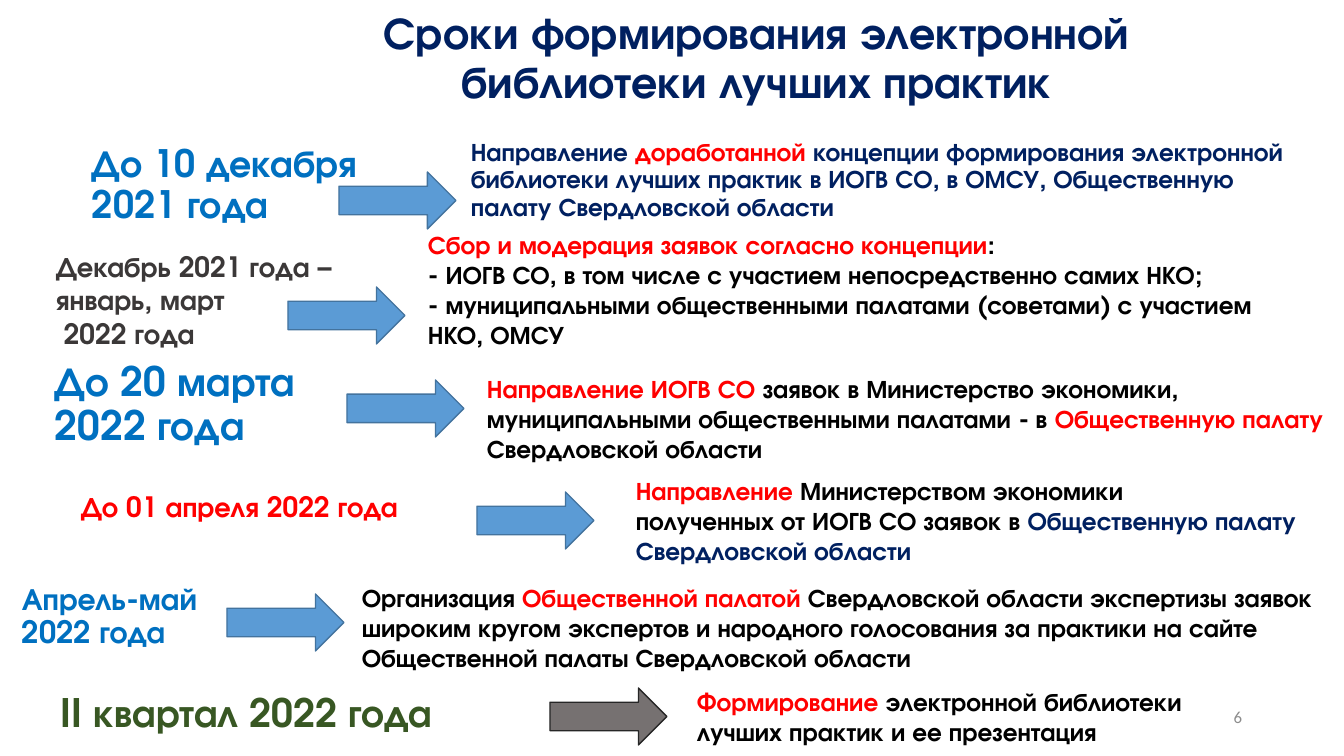
from dataclasses import dataclass

from lxml import etree
from pptx import Presentation
from pptx.dml.color import RGBColor
from pptx.enum.shapes import MSO_SHAPE
from pptx.enum.text import MSO_ANCHOR, MSO_AUTO_SIZE, PP_ALIGN
from pptx.oxml.ns import qn
from pptx.util import Emu, Pt

ARROW = MSO_SHAPE.RIGHT_ARROW
TOP, MIDDLE, BOTTOM = MSO_ANCHOR.TOP, MSO_ANCHOR.MIDDLE, MSO_ANCHOR.BOTTOM
LEFT, CENTER, RIGHT = PP_ALIGN.LEFT, PP_ALIGN.CENTER, PP_ALIGN.RIGHT
NO_FIT = MSO_AUTO_SIZE.NONE
SCALE = 914400 / 100.8
ARROW_SIZE = (117, 57)


@dataclass(frozen=True)
class Theme:
    """Colours, fonts and type sizes of the slide."""
    font: str = "TeX Gyre Adventor"
    plain: str = "Calibri"
    navy: str = "002060"
    blue: str = "0070C0"
    red: str = "FF0000"
    black: str = "000000"
    dark: str = "3B3838"
    green: str = "385723"
    pale: str = "8C8C8C"
    sky: tuple = ("5B9BD5", "43739E")
    gray: tuple = ("767171", "262626")
    title: int = 32
    body: int = 18
    small: int = 12


@dataclass(frozen=True)
class Stage:
    """One stage: its date, arrow and task."""
    date: list
    date_box: tuple
    size: int
    tint: str
    arrow: tuple
    task: list
    task_box: tuple
    date_gap: float = 0.9
    task_gap: float = 1.0
    paint: tuple = Theme.sky


T = Theme()

STAGES = [
    Stage(["До 10 декабря 2021 года"], (82, 136, 306, 96), 27, T.blue, (339, 172),
          [[("Направление ", T.navy), ("доработанной ", T.red),
            ("концепции формирования электронной библиотеки лучших практик в ИОГВ СО, "
             "в ОМСУ, Общественную палату Свердловской области", T.navy)]],
          (461, 135, 859, 126), task_gap=0.9),
    Stage(["Декабрь 2021 года – январь, март", " 2022 года"],
          (46, 243, 304, 112), 20, T.dark, (288, 287),
          [[("Сбор и модерация заявок согласно концепции", T.red), (":", T.black)],
           [("- ИОГВ СО, в том числе с участием непосредственно самих НКО;", T.black)],
           [("- муниципальными общественными палатами (советами) с участием НКО, ОМСУ",
             T.black)]],
          (418, 224, 900, 132), date_gap=1.0),
    Stage(["До 20 марта 2022 года"], (45, 355, 306, 99), 29, T.blue, (347, 380),
          [[("Направление ИОГВ СО ", T.red),
            ("заявок в Министерство экономики, муниципальными общественными палатами - в ",
             T.black),
            ("Общественную палату ", T.red), ("Свердловской области", T.black)]],
          (477, 368, 867, 102)),
    Stage(["До 01 апреля 2022 года"], (71, 479, 406, 50), 20, T.red, (477, 492),
          [[("Направление ", T.red), ("Министерством экономики", T.black)],
           [("полученных от ИОГВ СО заявок в ", T.black),
            ("Общественную палату Свердловской области", T.navy)]],
          (626, 470, 718, 102)),
    Stage(["Апрель-май", "2022 года"], (12, 568, 406, 87), 22, T.blue, (227, 594),
          [[("Организация ", T.black), ("Общественной палатой ", T.red),
            ("Свердловской области экспертизы заявок широким кругом экспертов и народного "
             "голосования за практики на сайте Общественной палаты Свердловской области",
             T.black)]],
          (352, 577, 992, 102)),
    Stage(["II квартал 2022 года"], (51, 682, 456, 58), 28, T.green, (550, 688),
          [[("Формирование ", T.red), ("электронной библиотеки", T.black)],
           [("лучших практик и ее презентация", T.black)]],
          (687, 681, 548, 68), date_gap=1.0, paint=T.gray),
]


def px(count):
    """Turn pixels into EMU."""
    return Emu(round(count * SCALE))


def place(shape, box):
    """Move and size a shape."""
    shape.left, shape.top, shape.width, shape.height = map(px, box)


def style(font, size, tint, name=T.font, bold=True):
    """Format a font."""
    font.name, font.size, font.bold = name, Pt(size), bold
    font.color.rgb = RGBColor.from_string(tint)


def write(shape, lines, size, gap=1.0, anchor=TOP, align=LEFT):
    """Fill a shape with lines of coloured runs."""
    frame = shape.text_frame
    frame.word_wrap, frame.auto_size = True, NO_FIT
    frame.vertical_anchor = anchor
    for index, line in enumerate(lines):
        para = frame.add_paragraph() if index else frame.paragraphs[0]
        para.alignment, para.line_spacing = align, gap
        for text, tint in line:
            run = para.add_run()
            run.text = text
            style(run.font, size, tint)


def add_text(slide, box, lines, size, gap, anchor=TOP):
    """Add a text box."""
    write(slide.shapes.add_textbox(*map(px, box)), lines, size, gap, anchor)


def add_arrow(slide, spot, paint):
    """Add a block arrow."""
    arrow = slide.shapes.add_shape(ARROW, *map(px, spot + ARROW_SIZE))
    arrow.shadow.inherit = False
    fill, edge = map(RGBColor.from_string, paint)
    arrow.fill.solid()
    arrow.fill.fore_color.rgb = fill
    arrow.line.color.rgb = edge
    arrow.line.width = Pt(1)


def add_stage(slide, stage):
    """Add the date, arrow and task of a stage."""
    dates = [[(text, stage.tint)] for text in stage.date]
    add_text(slide, stage.date_box, dates, stage.size, stage.date_gap, BOTTOM)
    add_arrow(slide, stage.arrow, stage.paint)
    add_text(slide, stage.task_box, stage.task, T.body, stage.task_gap)


def add_number(slide, box, number):
    """Add the slide number as a field."""
    frame = slide.shapes.add_textbox(*map(px, box)).text_frame
    frame.word_wrap, frame.vertical_anchor = True, MIDDLE
    para = frame.paragraphs[0]
    para.alignment = RIGHT
    run = para.add_run()
    run.text = number
    style(run.font, T.small, T.pale, T.plain, False)
    field = etree.SubElement(para._p, qn("a:fld"), type="slidenum",
                             id="{B6F15528-21DE-4FAA-801E-634DDDAF4B2B}")
    field.extend(list(run._r))
    para._p.remove(run._r)


def main():
    """Build and save the slide."""
    deck = Presentation()
    deck.slide_width, deck.slide_height = px(1344), px(756)
    deck.element.set("firstSlideNum", "6")
    slide = deck.slides.add_slide(deck.slide_layouts[5])
    title = slide.shapes.title
    place(title, (299, 9, 916, 104))
    heading = "Сроки формирования электронной библиотеки лучших практик"
    write(title, [[(heading, T.navy)]], T.title, 0.9, BOTTOM, CENTER)
    for stage in STAGES:
        add_stage(slide, stage)
    add_number(slide, (950, 697, 302, 40), "6")
    deck.save("out.pptx")


if __name__ == "__main__":
    main()
